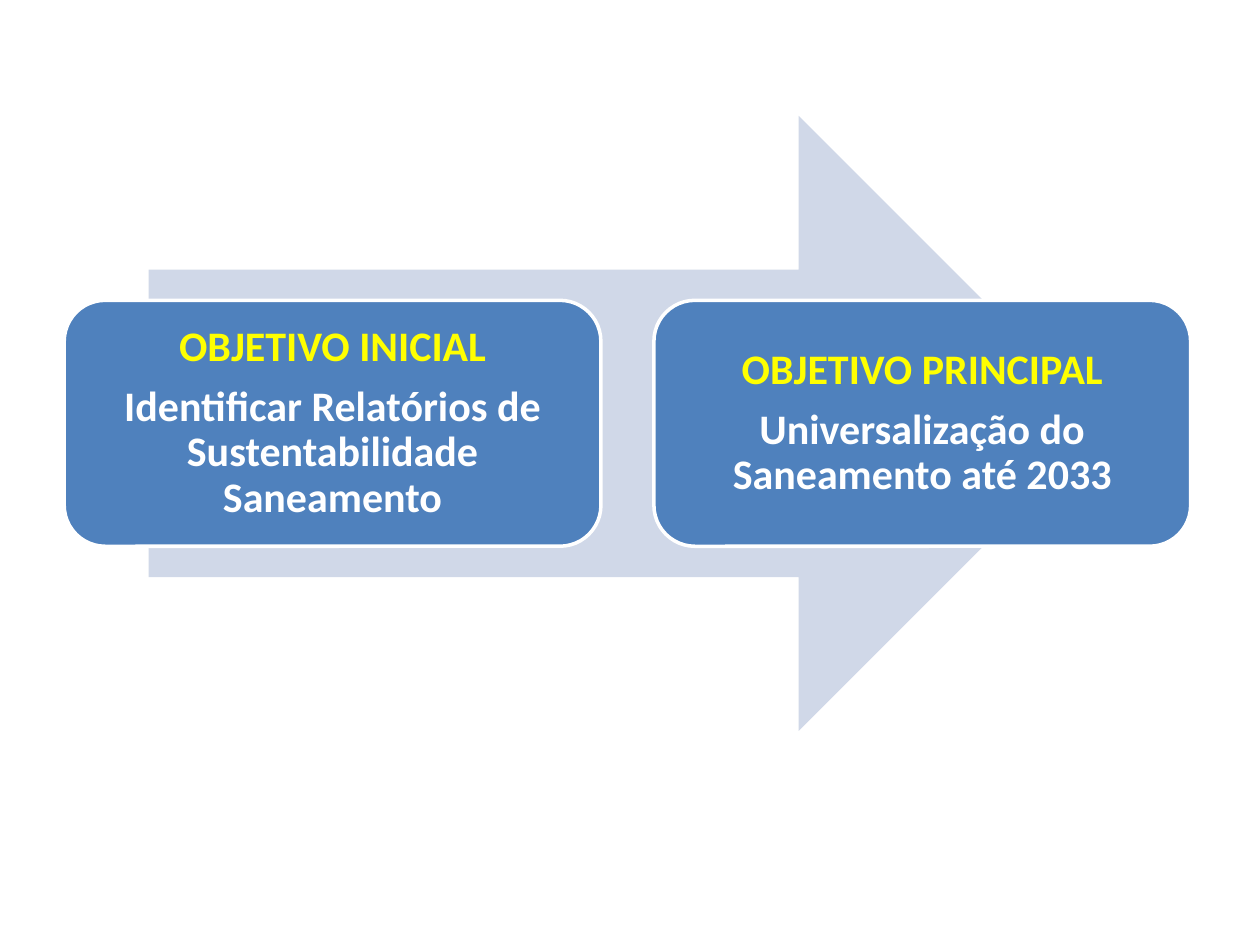
import pptx
import pptx.util
import pptx.dml.color
import pptx.enum.shapes
import pptx.enum.text

Inches = pptx.util.Inches
Pt = pptx.util.Pt
RGBColor = pptx.dml.color.RGBColor
MSO_SHAPE = pptx.enum.shapes.MSO_SHAPE

PALE_BLUE = RGBColor(0xD0, 0xD8, 0xE8)
BLUE = RGBColor(0x4F, 0x81, 0xBD)
WHITE = RGBColor(0xFF, 0xFF, 0xFF)
YELLOW = RGBColor(0xFF, 0xFF, 0x00)

SLIDE_WIDTH, SLIDE_HEIGHT = 10, 7.5
FLOW_BOX = (0.51, 0.92, 8.94, 4.88)
ARROW_SHARE = 0.85
CARD_HEIGHT_SHARE = 0.4
GAP = 0.42
FONT_SIZE = 24

GOALS = [
    ("OBJETIVO INICIAL", "Identificar Relatórios de Sustentabilidade Saneamento"),
    ("OBJETIVO PRINCIPAL", "Universalização do Saneamento até 2033"),
]


def add_filled(slide, kind, box, color):
    shape = slide.shapes.add_shape(kind, *map(Inches, box))
    shape.shadow.inherit = False
    shape.fill.solid()
    shape.fill.fore_color.rgb = color
    return shape


def add_arrow(slide, box):
    left, top, width, height = box
    arrow_width = width * ARROW_SHARE
    arrow_box = (left + (width - arrow_width) / 2, top, arrow_width, height)
    arrow = add_filled(slide, MSO_SHAPE.RIGHT_ARROW, arrow_box, PALE_BLUE)
    arrow.line.fill.background()


def add_goal(slide, box, heading, goal):
    card = add_filled(slide, MSO_SHAPE.ROUNDED_RECTANGLE, box, BLUE)
    card.line.color.rgb = WHITE
    card.line.width = Pt(2)
    frame = card.text_frame
    frame.word_wrap = True
    frame.vertical_anchor = pptx.enum.text.MSO_ANCHOR.MIDDLE
    frame.margin_left = frame.margin_right = Inches(0.1)
    frame.margin_top = frame.margin_bottom = Inches(0.1)
    frame.text = f"{heading}\n{goal}"
    for paragraph, color in zip(frame.paragraphs, (YELLOW, WHITE)):
        paragraph.alignment = pptx.enum.text.PP_ALIGN.CENTER
        paragraph.line_spacing = 0.9
        paragraph.font.name = "Calibri"
        paragraph.font.size = Pt(FONT_SIZE)
        paragraph.font.bold = True
        paragraph.font.color.rgb = color
    frame.paragraphs[0].space_after = Pt(0.35 * FONT_SIZE)


def add_goal_flow(slide, box, goals):
    left, top, width, height = box
    add_arrow(slide, box)
    card_width = (width - GAP * (len(goals) - 1)) / len(goals)
    card_height = height * CARD_HEIGHT_SHARE
    card_top = top + (height - card_height) / 2
    for column, (heading, goal) in enumerate(goals):
        card_left = left + column * (card_width + GAP)
        add_goal(slide, (card_left, card_top, card_width, card_height), heading, goal)


def main():
    deck = pptx.Presentation()
    deck.slide_width = Inches(SLIDE_WIDTH)
    deck.slide_height = Inches(SLIDE_HEIGHT)
    slide = deck.slides.add_slide(deck.slide_layouts[6])
    add_goal_flow(slide, FLOW_BOX, GOALS)
    deck.save("out.pptx")


if __name__ == "__main__":
    main()
